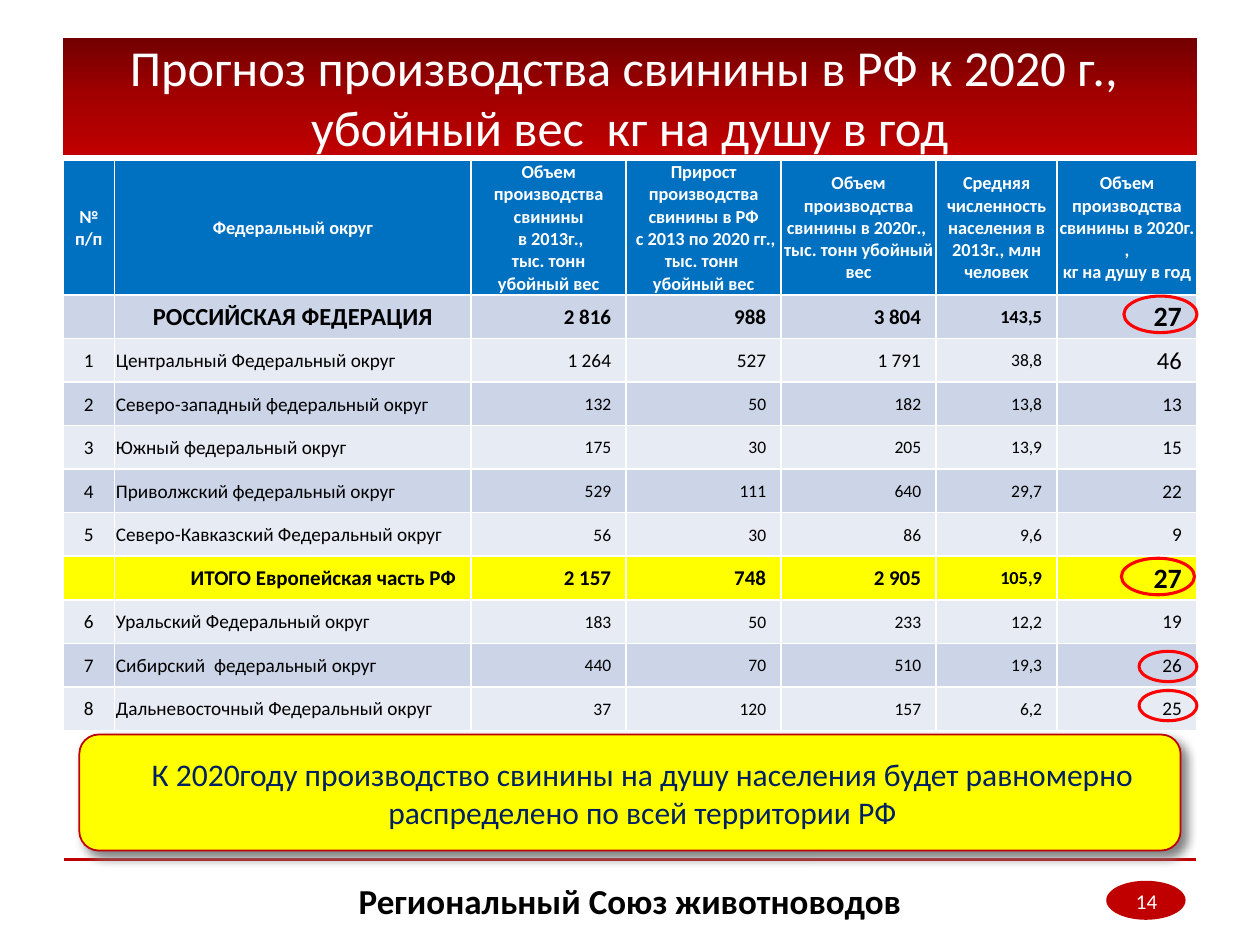
from copy import deepcopy

from lxml.etree import SubElement
from pptx import Presentation
from pptx.dml.color import RGBColor
from pptx.enum.shapes import MSO_CONNECTOR, MSO_SHAPE
from pptx.enum.text import MSO_ANCHOR, MSO_AUTO_SIZE, PP_ALIGN
from pptx.oxml import parse_xml
from pptx.oxml.ns import nsdecls, qn
from pptx.util import Inches, Pt

THEME = {
    "font": "Calibri",
    "color": {name: RGBColor.from_string(code) for name, code in {
        "white": "FFFFFF", "black": "000000", "navy": "002060", "blue": "0070C0",
        "band": "CCD5E8", "pale": "E7EBF4", "yellow": "FFFF00", "red": "C00000",
        "mark": "FF0000", "dark": "720000", "middle": "A20000",
    }.items()},
    "size": {"title": 28.8, "footer": 20, "callout": 18, "key": 16, "large": 14,
             "total": 12, "name": 11, "header": 10.5, "figure": 10},
}
COLOR, SIZE = THEME["color"], THEME["size"]

deck = Presentation()
deck.slide_width, deck.slide_height = Inches(10), Inches(7.5)
slide = deck.slides.add_slide(deck.slide_layouts[5])
shapes = slide.shapes


def area(left, top, width, height):
    across, down = deck.slide_width / 100, deck.slide_height / 100
    return round(left * across), round(top * down), round(width * across), round(height * down)


def write(frame, text, size, color, bold=False, align=PP_ALIGN.CENTER):
    frame.word_wrap = True
    frame.vertical_anchor = MSO_ANCHOR.MIDDLE
    frame.text = text
    look = {"name": THEME["font"], "size": Pt(SIZE[size]), "bold": bold}
    for paragraph in frame.paragraphs:
        paragraph.alignment = align
        for run in paragraph.runs:
            for attribute, value in look.items():
                setattr(run.font, attribute, value)
            run.font.color.rgb = COLOR[color]


badge = shapes.add_shape(MSO_SHAPE.OVAL, *area(87.8, 93.2, 6.3, 4.13))
badge.shadow.inherit = False
badge.fill.solid()
badge.fill.fore_color.rgb = COLOR["red"]
badge.line.fill.background()

left, top, width, _ = area(5.1, 90.93, 89.8, 0)
footer_rule = shapes.add_connector(MSO_CONNECTOR.STRAIGHT, left + width, top, left, top)
footer_rule.line.color.rgb = COLOR["red"]
footer_rule.line.width = Pt(1.5)
SubElement(footer_rule._element.spPr, qn("a:effectLst"))

heading = shapes.title
heading.left, heading.top, heading.width, heading.height = area(5, 4, 90, 12.4)
heading.fill.gradient()
heading.fill.gradient_angle = 270
stop_list = heading._element.spPr.find(qn("a:gradFill")).find(qn("a:gsLst"))
stop_list.insert(1, deepcopy(stop_list[0]))
for stop, (position, color) in zip(
        heading.fill.gradient_stops, [(0, "dark"), (0.5, "middle"), (1, "red")]):
    stop.position = position
    stop.color.rgb = COLOR[color]
heading.text_frame.auto_size = MSO_AUTO_SIZE.NONE
write(heading.text_frame,
      "Прогноз производства свинины в РФ к 2020 г., \vубойный вес  кг на душу в год",
      "title", "white")

callout = shapes.add_shape(MSO_SHAPE.ROUNDED_RECTANGLE, *area(6.3, 77.73, 87.4, 12.27))
callout.fill.solid()
callout.fill.fore_color.rgb = COLOR["yellow"]
callout.line.color.rgb = COLOR["red"]
callout.line.width = Pt(1)
callout._element.spPr.append(parse_xml(
    f'<a:effectLst {nsdecls("a")}><a:outerShdw blurRad="{Pt(6)}" dist="{Pt(4)}" '
    f'dir="{48 * 60000}" algn="tl" rotWithShape="0"><a:srgbClr val="808080"/>'
    '</a:outerShdw></a:effectLst>'))
write(callout.text_frame,
      "К 2020году производство свинины на душу населения будет равномерно "
      "распределено по всей территории РФ", "callout", "navy")
callout.text_frame.paragraphs[0]._p.get_or_add_pPr().set("marL", str(Inches(0.2)))

headers = [
    "№\vп/п",
    "Федеральный округ",
    "Объем производства свинины\n в 2013г.,\n тыс. тонн \nубойный вес",
    "Прирост производства свинины в РФ\n с 2013 по 2020 гг., тыс. тонн \nубойный вес",
    "Объем производства свинины в 2020г.,  тыс. тонн убойный вес",
    "Средняя численность населения в 2013г., млн человек",
    "Объем производства свинины в 2020г. ,\vкг на душу в год",
]
districts = [
    ["", "РОССИЙСКАЯ ФЕДЕРАЦИЯ", "2 816", "988", "3 804", "143,5", "27"],
    ["1", "Центральный Федеральный округ", "1 264", "527", "1 791", "38,8", "46"],
    ["2", "Северо-западный федеральный округ", "132", "50", "182", "13,8", "13"],
    ["3", "Южный федеральный округ", "175", "30", "205", "13,9", "15"],
    ["4", "Приволжский федеральный округ", "529", "111", "640", "29,7", "22"],
    ["5", "Северо-Кавказский Федеральный округ", "56", "30", "86", "9,6", "9"],
    ["", "ИТОГО Европейская часть РФ", "2 157", "748", "2 905", "105,9", "27"],
    ["6", "Уральский Федеральный округ", "183", "50", "233", "12,2", "19"],
    ["7", "Сибирский  федеральный округ", "440", "70", "510", "19,3", "26"],
    ["8", "Дальневосточный Федеральный округ", "37", "120", "157", "6,2", "25"],
]
column_shares = [4.1, 28.3, 12.3, 12.3, 12.3, 9.6, 11.1]
row_shares = [14.13] + [4.61] * len(districts)
total_sizes = ["name", "total", "total", "total", "total", "header", "key"]
first_sizes = ["name", "name", "name", "name", "name", "figure", "large"]
plain_sizes = ["name", "name", "figure", "figure", "figure", "figure", "name"]

forecast = shapes.add_table(len(row_shares), len(column_shares),
                            *area(5, 16.93, 90, sum(row_shares))).table
for column, share in zip(forecast.columns, column_shares):
    column.width = area(0, 0, share, 0)[2]
for row, share in zip(forecast.rows, row_shares):
    row.height = area(0, 0, 0, share)[3]

for r, values in enumerate([headers] + districts):
    is_header, is_total = r == 0, r > 0 and not values[0]
    sizes = (["header"] * 7 if is_header else total_sizes if is_total
             else first_sizes if r == 2 else plain_sizes)
    fill = "blue" if is_header else "yellow" if r == 7 else "band" if r % 2 else "pale"
    for c, value in enumerate(values):
        size, align, right_inset = sizes[c], PP_ALIGN.CENTER, 0.01
        if not is_header and (c > 1 or (r == 7 and c == 1)):
            align, right_inset = PP_ALIGN.RIGHT, 0.12
        elif c == 1 and r == 1:
            size = "large"
        elif c == 1 and not is_header:
            align = PP_ALIGN.LEFT
        cell = forecast.cell(r, c)
        cell_format = {"margin_left": Inches(0.01), "margin_top": Inches(0.01),
                       "margin_right": Inches(right_inset), "margin_bottom": 0,
                       "vertical_anchor": MSO_ANCHOR.MIDDLE}
        for attribute, setting in cell_format.items():
            setattr(cell, attribute, setting)
        cell.fill.solid()
        cell.fill.fore_color.rgb = COLOR[fill]
        write(cell.text_frame, value, size, "white" if is_header else "black",
              is_header or is_total, align)
        cell.vertical_anchor = MSO_ANCHOR.MIDDLE

for highlight in [(90.4, 68.93, 4.6, 3.2), (90.4, 73.07, 4.6, 3.2),
                  (89, 59.07, 5.8, 3.87), (89.2, 31.33, 5.8, 3.87)]:
    ring = shapes.add_shape(MSO_SHAPE.OVAL, *area(*highlight))
    ring.shadow.inherit = False
    ring.fill.background()
    ring.line.color.rgb = COLOR["mark"]
    ring.line.width = Pt(1.75)

for place, text, size, color, bold in [
    ((18.1, 92.67, 63.8, 5.33), "Региональный Союз животноводов", "footer", "black", True),
    ((86.4, 92.67, 9.2, 5.33), "14", "total", "white", False),
]:
    write(shapes.add_textbox(*area(*place)).text_frame, text, size, color, bold)

deck.save("out.pptx")
